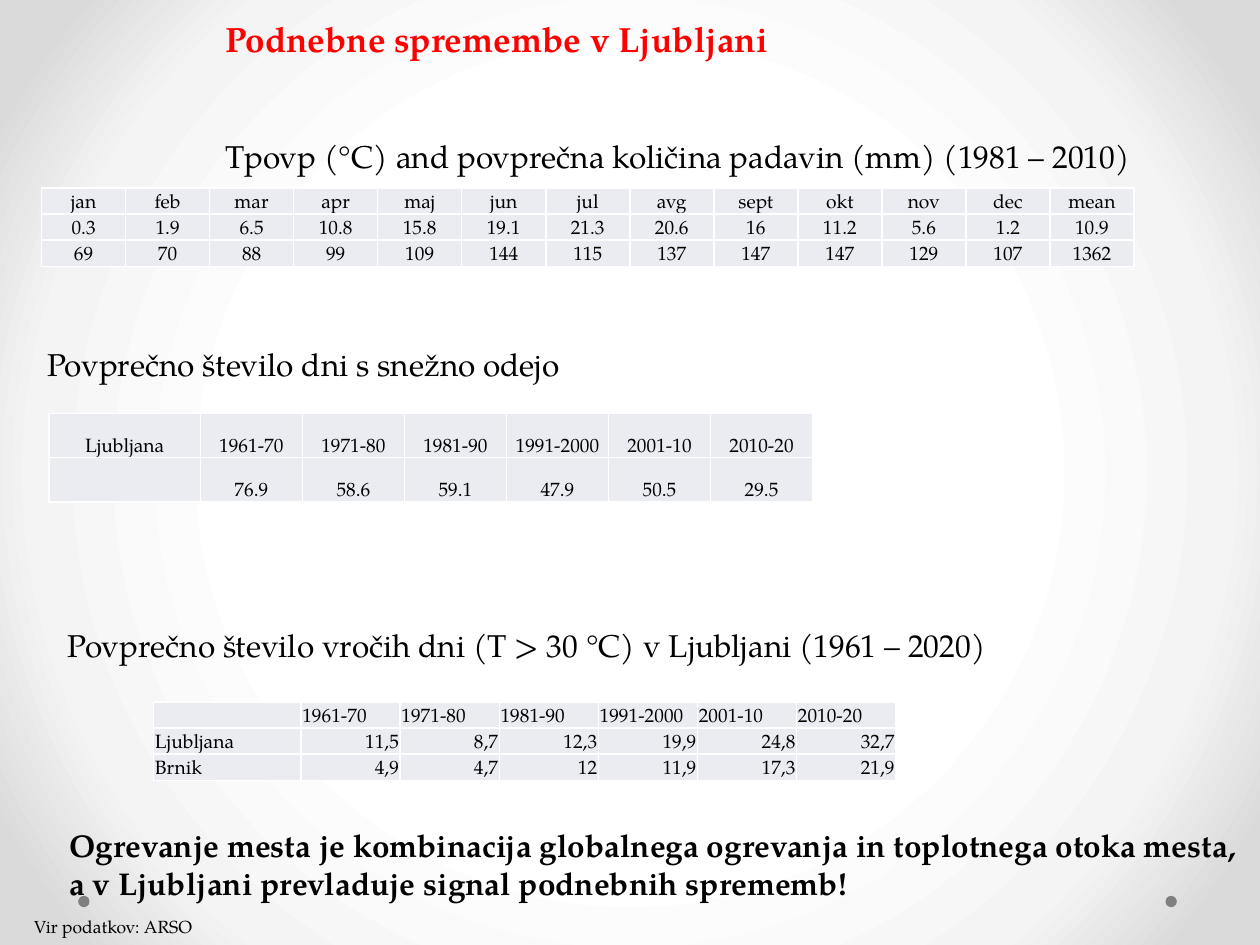
import pptx
import pptx.dml.color
import pptx.enum.shapes
import pptx.enum.text
import pptx.oxml
import pptx.oxml.ns
import pptx.util
from lxml import etree

RGBColor = pptx.dml.color.RGBColor
ALIGN = pptx.enum.text.PP_ALIGN

BLACK = RGBColor(0x00, 0x00, 0x00)
WHITE = RGBColor(0xFF, 0xFF, 0xFF)
RED = RGBColor(0xFF, 0x00, 0x00)
GREY = RGBColor(0x80, 0x80, 0x80)
CELL = RGBColor(0xEA, 0xEC, 0xF2)
GLOW = [(50, WHITE), (76, RGBColor(0xF4, 0xF4, 0xF4)), (92, RGBColor(0xDA, 0xDA, 0xDA))]

DECADES = ["1961-70", "1971-80", "1981-90", "1991-2000", "2001-10", "2010-20"]
MONTHLY = [
    ["jan", "feb", "mar", "apr", "maj", "jun", "jul", "avg", "sept", "okt", "nov", "dec", "mean"],
    ["0.3", "1.9", "6.5", "10.8", "15.8", "19.1", "21.3", "20.6", "16", "11.2", "5.6", "1.2", "10.9"],
    ["69", "70", "88", "99", "109", "144", "115", "137", "147", "147", "129", "107", "1362"],
]
SNOW_DAYS = [
    ["Ljubljana", *DECADES],
    ["", "76.9", "58.6", "59.1", "47.9", "50.5", "29.5"],
]
HOT_DAYS = [
    ["", *DECADES],
    ["Ljubljana", "11,5", "8,7", "12,3", "19,9", "24,8", "32,7"],
    ["Brnik", "4,9", "4,7", "12", "11,9", "17,3", "21,9"],
]


def centred(row, col):
    return ALIGN.CENTER


def figures_right(row, col):
    return ALIGN.RIGHT if row and col else ALIGN.LEFT


class Deck:
    """Draws styled elements on a slide grid of 100 columns by 75 rows."""

    font = "TeX Gyre Pagella"

    def __init__(self):
        self.prs = pptx.Presentation()
        self.prs.slide_width = pptx.util.Inches(10)
        self.prs.slide_height = pptx.util.Inches(7.5)
        self.s = self.prs.slides.add_slide(self.prs.slide_layouts[6])

    def grid(self, *lengths):
        return [round(n * self.prs.slide_width / 100) for n in lengths]

    def background(self, stops):
        self.s.background.fill.solid()
        bg = self.s.background._cSld.bg.bgPr
        marks = "".join(
            f'<a:gs pos="{pos * 1000}"><a:srgbClr val="{color}"/></a:gs>' for pos, color in stops
        )
        grad = pptx.oxml.parse_xml(
            f'<a:gradFill {pptx.oxml.ns.nsdecls("a")} rotWithShape="1"><a:gsLst>{marks}</a:gsLst>'
            '<a:path path="circle"><a:fillToRect l="50000" t="50000" r="50000" b="50000"/></a:path>'
            "</a:gradFill>"
        )
        bg.replace(bg[0], grad)

    def dot(self, x, y, size):
        kind = pptx.enum.shapes.MSO_SHAPE.OVAL
        sp = self.s.shapes.add_shape(kind, *self.grid(x, y, size, size))
        sp.shadow.inherit = False
        sp.fill.solid()
        sp.fill.fore_color.rgb = GREY
        sp.line.fill.background()

    def run(self, p, text, size, color=BLACK, bold=False):
        r = p.add_run()
        r.text = text
        r.font.name = self.font
        r.font.size = pptx.util.Pt(size)
        r.font.bold = bold
        r.font.color.rgb = color

    def text(self, x, y, w, h, lines, wrap=False, gap=0):
        tf = self.s.shapes.add_textbox(*self.grid(x, y, w, h)).text_frame
        tf.word_wrap = wrap
        for i, line in enumerate(lines):
            p = tf.add_paragraph() if i else tf.paragraphs[0]
            p.space_before = pptx.util.Pt(gap if i else 0)
            self.run(p, *line)

    def border(self, cell):
        tc = cell._tc.get_or_add_tcPr()
        for side in ("lnL", "lnR", "lnT", "lnB"):
            ln = etree.SubElement(tc, pptx.oxml.ns.qn(f"a:{side}"), w=str(pptx.util.Pt(1)))
            fill = etree.SubElement(ln, pptx.oxml.ns.qn("a:solidFill"))
            etree.SubElement(fill, pptx.oxml.ns.qn("a:srgbClr"), val=str(WHITE))

    def cell(self, cell, text, align):
        self.border(cell)
        cell.fill.solid()
        cell.fill.fore_color.rgb = CELL
        cell.vertical_anchor = pptx.enum.text.MSO_ANCHOR.BOTTOM
        cell.margin_left = cell.margin_right = cell.margin_top = pptx.util.Inches(0.01)
        cell.margin_bottom = 0
        p = cell.text_frame.paragraphs[0]
        p.alignment = align
        if text:
            self.run(p, text, 11)
        else:
            etree.SubElement(p._p, pptx.oxml.ns.qn("a:endParaRPr"), sz="1100")

    def table(self, x, y, first, other, row_height, rows, align):
        widths = [first] + [other] * (len(rows[0]) - 1)
        box = self.grid(x, y, sum(widths), row_height * len(rows))
        table = self.s.shapes.add_table(len(rows), len(widths), *box).table
        table.first_row = table.horz_banding = False
        for column, width in zip(table.columns, self.grid(*widths)):
            column.width = width
        for i, values in enumerate(rows):
            table.rows[i].height = self.grid(row_height)[0]
            for j, value in enumerate(values):
                self.cell(table.cell(i, j), value, align(i, j))


def main():
    deck = Deck()
    deck.background(GLOW)
    for x in (92.5, 6.2):
        deck.dot(x, 71.1, 0.9)

    deck.table(3.3, 14.9, 6.67, 6.67, 2.08, MONTHLY, centred)
    deck.text(16.9, 0.9, 74.5, 16.5, [
        ("Podnebne spremembe v Ljubljani", 20, RED, True),
        ("Tpovp (°C) and povprečna količina padavin (mm) (1981 – 2010)", 18),
    ], gap=44)

    deck.text(2.8, 26.9, 43.3, 4, [("Povprečno število dni s snežno odejo", 18)])
    deck.table(3.9, 32.8, 12, 8.1, 3.53, SNOW_DAYS, centred)

    deck.text(4.4, 49.2, 84.3, 4, [
        ("Povprečno število vročih dni (T > 30 °C) v Ljubljani (1961 – 2020)", 18),
    ], wrap=True)
    deck.text(4.5, 65.1, 96.3, 7.1, [
        ("Ogrevanje mesta je kombinacija globalnega ogrevanja in toplotnega otoka mesta,", 18, BLACK, True),
        ("a v Ljubljani prevladuje signal podnebnih sprememb!", 18, BLACK, True),
    ])
    deck.text(1.7, 72.2, 14.9, 2.7, [("Vir podatkov: ARSO", 10)])
    deck.table(12.2, 55.7, 11.7, 7.87, 2.08, HOT_DAYS, figures_right)

    deck.prs.save("out.pptx")


if __name__ == "__main__":
    main()
